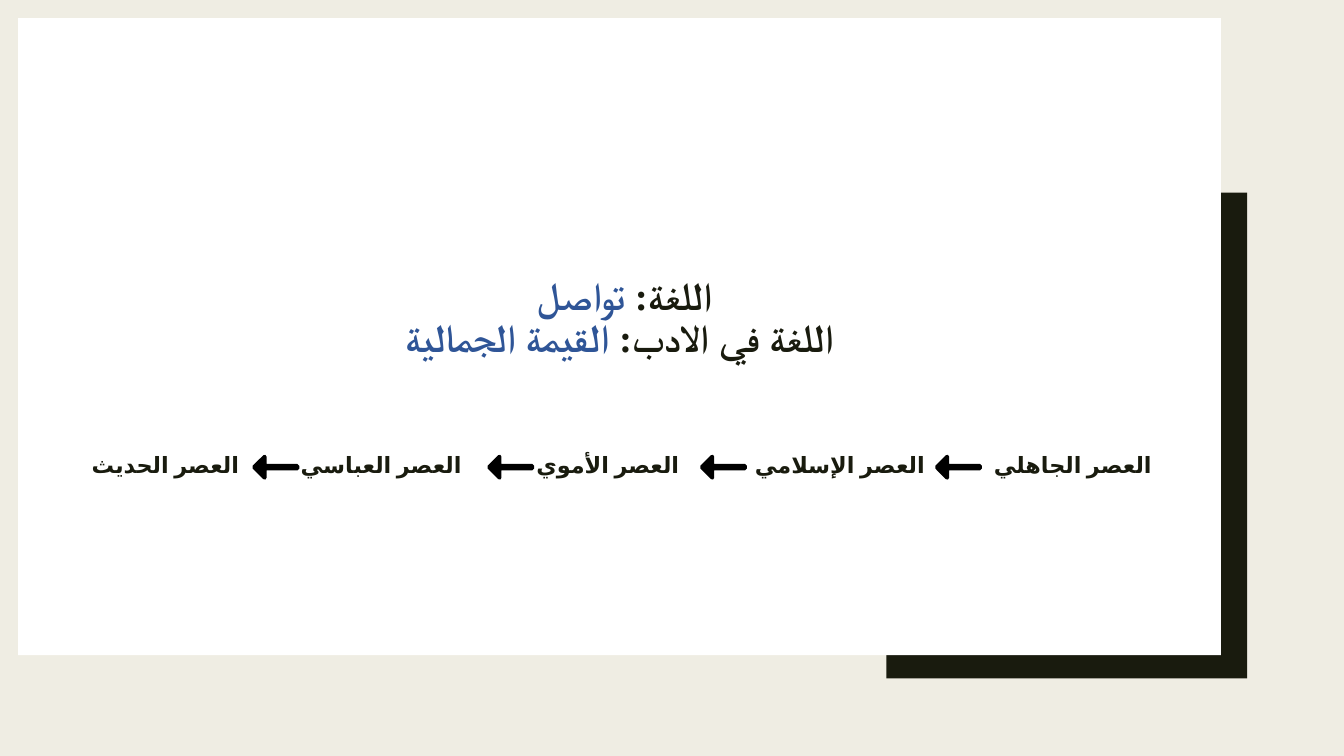
from dataclasses import dataclass

from pptx import Presentation
from pptx.dml.color import RGBColor
from pptx.enum import shapes, text
from pptx.oxml import ns
from pptx.util import Inches, Pt

CREAM = RGBColor(0xEF, 0xED, 0xE3)
DARK = RGBColor(0x19, 0x1B, 0x0E)
WHITE = RGBColor(0xFF, 0xFF, 0xFF)
BLUE = RGBColor(0x2F, 0x55, 0x97)
BLACK = RGBColor(0, 0, 0)


@dataclass
class Part:
    wording: str
    color: RGBColor


@dataclass
class Era:
    name: str
    center: float


HEADING = [
    [Part("اللغة: ", DARK), Part("تواصل ", BLUE)],
    [Part("اللغة في الادب: ", DARK), Part("القيمة الجمالية", BLUE)],
]
ERAS = [
    Era("العصر الجاهلي", 10.64),
    Era("العصر الإسلامي", 8.33),
    Era("العصر الأموي", 6.03),
    Era("العصر العباسي", 3.78),
    Era("العصر الحديث", 1.64),
]
ERA_WIDTH = 1.9
ARROW_LEFTS = [9.29, 6.96, 4.85, 2.52]
CORNER = [(11.93, 1.91), (12.37, 1.91), (12.37, 6.73),
          (8.79, 6.73), (8.79, 6.32), (11.93, 6.32)]


def paint(shape, color: RGBColor) -> None:
    shape.shadow.inherit = False
    shape.fill.solid()
    shape.fill.fore_color.rgb = color
    shape.line.fill.background()


def add_corner(slide) -> None:
    """Draw the dark L shape behind the lower right of the panel."""
    points = [(Inches(x), Inches(y)) for x, y in CORNER]
    builder = slide.shapes.build_freeform(*points[0])
    builder.add_line_segments(points[1:], close=True)
    paint(builder.convert_to_shape(), DARK)


def add_panel(slide) -> None:
    panel = slide.shapes.add_shape(
        shapes.MSO_SHAPE.RECTANGLE,
        Inches(0.18), Inches(0.18), Inches(11.93), Inches(6.32))
    paint(panel, WHITE)


def add_arabic_text(slide, box: tuple[float, float, float, float],
                    lines: list[list[Part]], font: str, size: int,
                    spacing: float = 1.0) -> None:
    """Add centred, bold, right-to-left lines in a box without margins."""
    frame = slide.shapes.add_textbox(*map(Inches, box)).text_frame
    frame.word_wrap = True
    frame.margin_left = frame.margin_right = 0
    frame.margin_top = frame.margin_bottom = 0
    for index, parts in enumerate(lines):
        paragraph = frame.paragraphs[0] if index == 0 else frame.add_paragraph()
        paragraph.alignment = text.PP_ALIGN.CENTER
        paragraph.line_spacing = spacing
        paragraph._p.get_or_add_pPr().set("rtl", "1")
        for part in parts:
            run = paragraph.add_run()
            run.text = part.wording
            run.font.name = font
            run.font.size = Pt(size)
            run.font.bold = True
            run.font.color.rgb = part.color
            properties = run._r.get_or_add_rPr()
            properties.set("lang", "ar-SA")
            script_font = properties.makeelement(ns.qn("a:cs"), {"typeface": font})
            properties.append(script_font)


def add_era_arrow(slide, left: float) -> None:
    arrow = slide.shapes.add_shape(
        shapes.MSO_SHAPE.LEFT_ARROW,
        Inches(left), Inches(4.53), Inches(0.43), Inches(0.21))
    arrow.adjustments[0] = 0.12
    arrow.adjustments[1] = 0.5
    paint(arrow, BLACK)
    arrow.line.color.rgb = BLACK
    arrow.line.width = Pt(2.75)


def main() -> None:
    presentation = Presentation()
    presentation.slide_width = Inches(13.33)
    presentation.slide_height = Inches(7.5)
    slide = presentation.slides.add_slide(presentation.slide_layouts[6])
    slide.background.fill.solid()
    slide.background.fill.fore_color.rgb = CREAM

    add_corner(slide)
    add_panel(slide)
    add_arabic_text(slide, (0.53, 2.75, 11.23, 0.85), HEADING,
                    "Times New Roman", 28, 0.89)
    for era in ERAS:
        add_arabic_text(slide, (era.center - ERA_WIDTH / 2, 4.48, ERA_WIDTH, 0.3),
                        [[Part(era.name, DARK)]], "Roboto", 16)
    for left in ARROW_LEFTS:
        add_era_arrow(slide, left)

    presentation.save("out.pptx")


if __name__ == "__main__":
    main()
